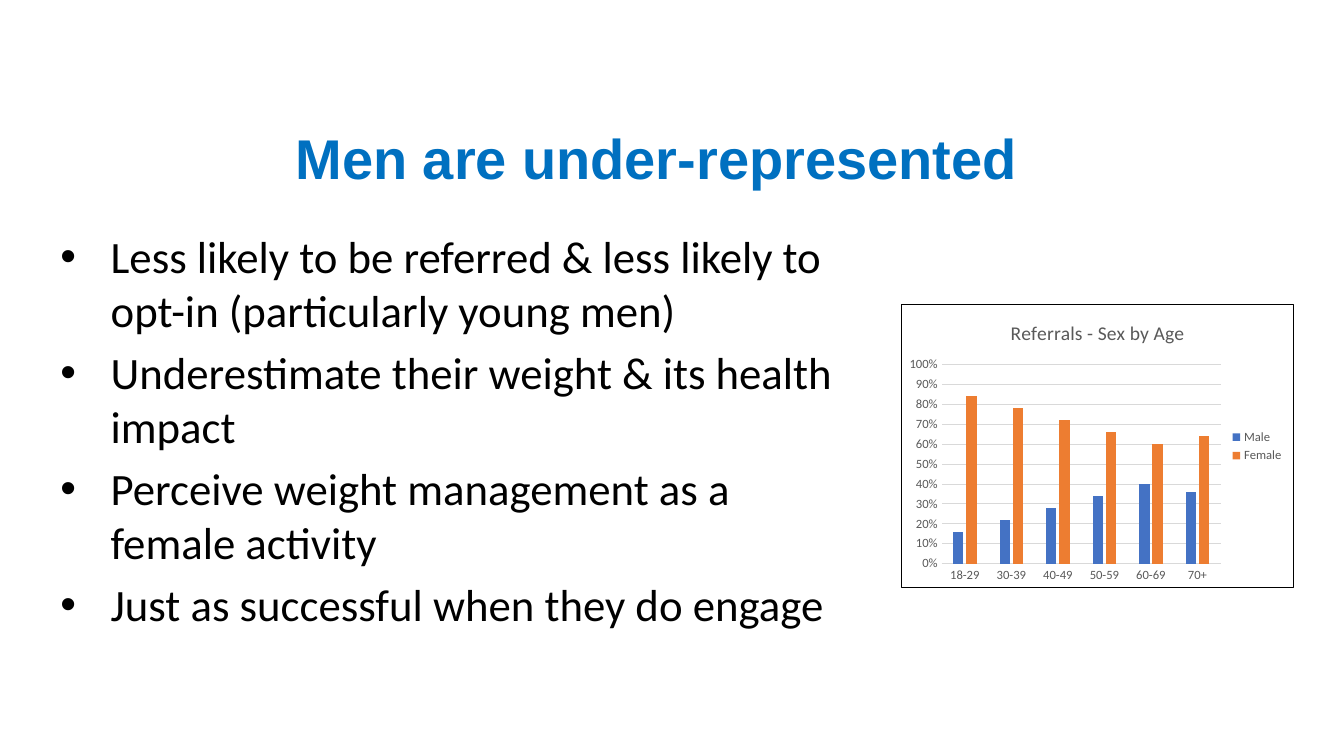
from lxml import etree
from pptx import Presentation
from pptx.chart.data import CategoryChartData as ChartData
from pptx.dml.color import RGBColor
from pptx.enum.chart import XL_CHART_TYPE as Kind, XL_LEGEND_POSITION as Side, XL_TICK_MARK as Tick
from pptx.enum.text import MSO_ANCHOR as Anchor, PP_ALIGN as Align
from pptx.oxml import parse_xml
from pptx.oxml.ns import nsdecls, qn
from pptx.util import Cm, Pt

TITLE = "Men are under-represented"
POINTS = [
    "Less likely to be referred & less likely to opt-in (particularly young men)",
    "Underestimate their weight & its health impact",
    "Perceive weight management as a female activity",
    "Just as successful when they do engage",
]
HEAD = "Referrals - Sex by Age"
AGES = ["18-29", "30-39", "40-49", "50-59", "60-69", "70+"]
SERIES = [
    ("Male", "4472C4", [0.16, 0.22, 0.28, 0.34, 0.4, 0.36]),
    ("Female", "ED7D31", [0.84, 0.78, 0.72, 0.66, 0.6, 0.64]),
]
GREY, PALE = "595959", "D9D9D9"


def color(code):
    return RGBColor.from_string(code)


def style(font, name, size, code, bold=False):
    font.name, font.size, font.bold = name, Pt(size), bold
    font.color.rgb = color(code)


def rule(line, code):
    line.color.rgb = color(code)
    line.width = Pt(0.75)


def add_box(slide, left, top, width, height):
    frame = slide.shapes.add_textbox(Cm(left), Cm(top), Cm(width), Cm(height)).text_frame
    frame.word_wrap = True
    return frame


def add_bullet(para):
    props = para._p.get_or_add_pPr()
    props.set("marL", str(Cm(1.75)))
    props.set("indent", str(-Cm(1.27)))
    etree.SubElement(props, qn("a:buFont")).set("typeface", "Arial")
    etree.SubElement(props, qn("a:buChar")).set("char", "•")


def add_title(slide):
    frame = add_box(slide, 1.93, 2.9, 29.21, 2.31)
    frame.vertical_anchor = Anchor.MIDDLE
    para = frame.paragraphs[0]
    para.alignment, para.line_spacing = Align.CENTER, 0.9
    run = para.add_run()
    run.text = TITLE
    style(run.font, "Arial", 40, "0070C0", True)


def add_points(slide):
    frame = add_box(slide, 0.79, 5.64, 20.8, 10.46)
    for i, text in enumerate(POINTS):
        para = frame.add_paragraph() if i else frame.paragraphs[0]
        add_bullet(para)
        if i:
            para.space_before = Pt(6)
        run = para.add_run()
        run.text = text
        style(run.font, "Calibri", 32, "000000")


def add_graph(slide):
    data = ChartData(number_format="0%")
    data.categories = AGES
    for name, _, vals in SERIES:
        data.add_series(name, vals)
    chart = slide.shapes.add_chart(
        Kind.COLUMN_CLUSTERED, Cm(22.71), Cm(7.67), Cm(9.91), Cm(7.16), data).chart
    style(chart.font, "Calibri", 10, "000000")

    run = chart.chart_title.text_frame.paragraphs[0].add_run()
    run.text = HEAD
    style(run.font, "Calibri", 14, GREY)
    chart.chart_title.include_in_layout = False

    chart.has_legend = True
    chart.legend.position = Side.RIGHT
    chart.legend.include_in_layout = False
    style(chart.legend.font, "Calibri", 9, GREY)

    cat, val = chart.category_axis, chart.value_axis
    for axis in (cat, val):
        axis.major_tick_mark = axis.minor_tick_mark = Tick.NONE
        style(axis.tick_labels.font, "Calibri", 9, GREY)
    rule(cat.format.line, PALE)
    val.format.line.fill.background()
    val.minimum_scale, val.maximum_scale, val.major_unit = 0, 1, 0.1
    val.tick_labels.number_format = "0%"
    val.tick_labels.number_format_is_linked = False
    rule(val.major_gridlines.format.line, PALE)

    plot = chart.plots[0]
    plot.gap_width, plot.overlap, plot.vary_by_categories = 219, -27, False
    for bars, (_, code, _) in zip(plot.series, SERIES):
        bars.format.fill.solid()
        bars.format.fill.fore_color.rgb = color(code)

    frame = parse_xml(
        f'<c:spPr {nsdecls("c", "a")}><a:noFill/><a:ln w="{Pt(0.75)}">'
        '<a:solidFill><a:srgbClr val="000000"/></a:solidFill></a:ln></c:spPr>')
    chart._chartSpace.find(qn("c:chart")).addnext(frame)


def main():
    deck = Presentation()
    deck.slide_width, deck.slide_height = Cm(33.87), Cm(19.05)
    slide = deck.slides.add_slide(deck.slide_layouts[6])
    add_title(slide)
    add_points(slide)
    add_graph(slide)
    deck.save("out.pptx")


if __name__ == "__main__":
    main()
